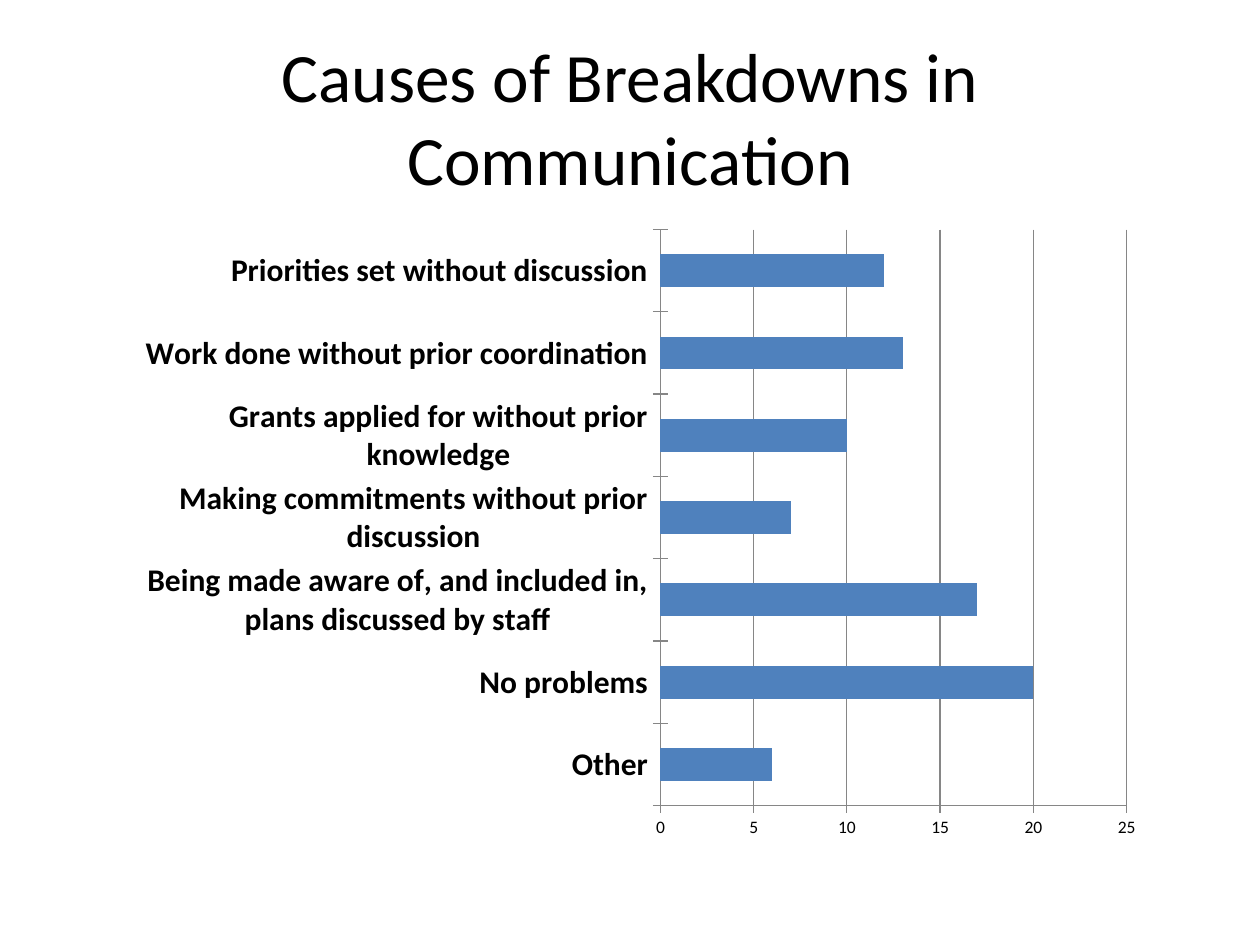
"""Build a slide with a bar chart on the causes of communication breakdowns."""
from lxml import etree
from pptx import Presentation
from pptx.chart.data import CategoryChartData
from pptx.dml.color import RGBColor
from pptx.enum.chart import XL_CHART_TYPE, XL_TICK_MARK
from pptx.enum.text import MSO_ANCHOR, PP_ALIGN
from pptx.oxml.ns import qn
from pptx.util import Inches, Pt

BAR_CHART = XL_CHART_TYPE.BAR_CLUSTERED
CROSS = XL_TICK_MARK.CROSS
MIDDLE = MSO_ANCHOR.MIDDLE
CENTER = PP_ALIGN.CENTER
BLACK = RGBColor(0x00, 0x00, 0x00)
GRAY = RGBColor(0x86, 0x86, 0x86)
BLUE = RGBColor(0x4F, 0x81, 0xBD)
FONT = "Calibri"

TITLE = "Causes of Breakdowns in Communication"
CAUSES = [
    ("Other", 6),
    ("No problems", 20),
    ("Being made aware of, and included in, plans discussed by staff", 17),
    ("Making commitments without prior discussion", 7),
    ("Grants applied for without prior knowledge", 10),
    ("Work done without prior coordination", 13),
    ("Priorities set without discussion", 12),
]
TITLE_FRAME = (0.5, 0.3, 9, 1.25)
CHART_FRAME = (1.08, 1.67, 8.08, 5.08)
PLOT_LAYOUT = {
    "layoutTarget": "inner", "xMode": "edge", "yMode": "edge",
    "x": 0.515, "y": 0.03, "w": 0.458, "h": 0.9,
}


def style_font(font, size, bold=False):
    """Apply the slide font in black."""
    font.name = FONT
    font.size = Pt(size)
    font.bold = bold
    font.color.rgb = BLACK


def add_text(page, text, frame, size, align=CENTER, anchor=MIDDLE):
    """Add a wrapped text box."""
    box = page.shapes.add_textbox(*map(Inches, frame))
    box.text_frame.word_wrap = True
    box.text_frame.vertical_anchor = anchor
    para = box.text_frame.paragraphs[0]
    para.alignment = align
    span = para.add_run()
    span.text = text
    style_font(span.font, size)


def place_plot(chart, settings):
    """Fix the inner plot area as fractions of the chart."""
    plot_area = chart._chartSpace.find(".//" + qn("c:plotArea"))
    for old in plot_area.findall(qn("c:layout")):
        plot_area.remove(old)
    layout = etree.Element(qn("c:layout"))
    manual = etree.SubElement(layout, qn("c:manualLayout"))
    for name, value in settings.items():
        etree.SubElement(manual, qn("c:" + name)).set("val", str(value))
    plot_area.insert(0, layout)


def add_causes_chart(page):
    """Add the bar chart of causes."""
    data = CategoryChartData()
    data.categories = [cause for cause, _ in CAUSES]
    data.add_series("Series 1", [count for _, count in CAUSES])
    chart = page.shapes.add_chart(BAR_CHART, *map(Inches, CHART_FRAME), data).chart
    chart.has_legend = False
    chart.has_title = False
    style_font(chart.font, 10)

    for axis, size, bold in ((chart.category_axis, 18, True), (chart.value_axis, 10, False)):
        style_font(axis.tick_labels.font, size, bold)
        axis.major_tick_mark = CROSS
        axis.format.line.color.rgb = GRAY
        axis.format.line.width = Pt(0.75)
    chart.category_axis.has_major_gridlines = False
    values = chart.value_axis
    values.minimum_scale, values.maximum_scale, values.major_unit = 0, 25, 5
    values.has_major_gridlines = True
    values.major_gridlines.format.line.color.rgb = GRAY
    values.major_gridlines.format.line.width = Pt(0.75)

    plot = chart.plots[0]
    plot.gap_width = 150
    plot.vary_by_categories = False
    fill = plot.series[0].format.fill
    fill.solid()
    fill.fore_color.rgb = BLUE
    place_plot(chart, PLOT_LAYOUT)


def main():
    """Create and save the deck."""
    deck = Presentation()
    deck.slide_width, deck.slide_height = Inches(10), Inches(7.5)
    page = deck.slides.add_slide(deck.slide_layouts[6])
    add_text(page, TITLE, TITLE_FRAME, size=39.6)
    add_causes_chart(page)
    deck.save("out.pptx")


if __name__ == "__main__":
    main()
